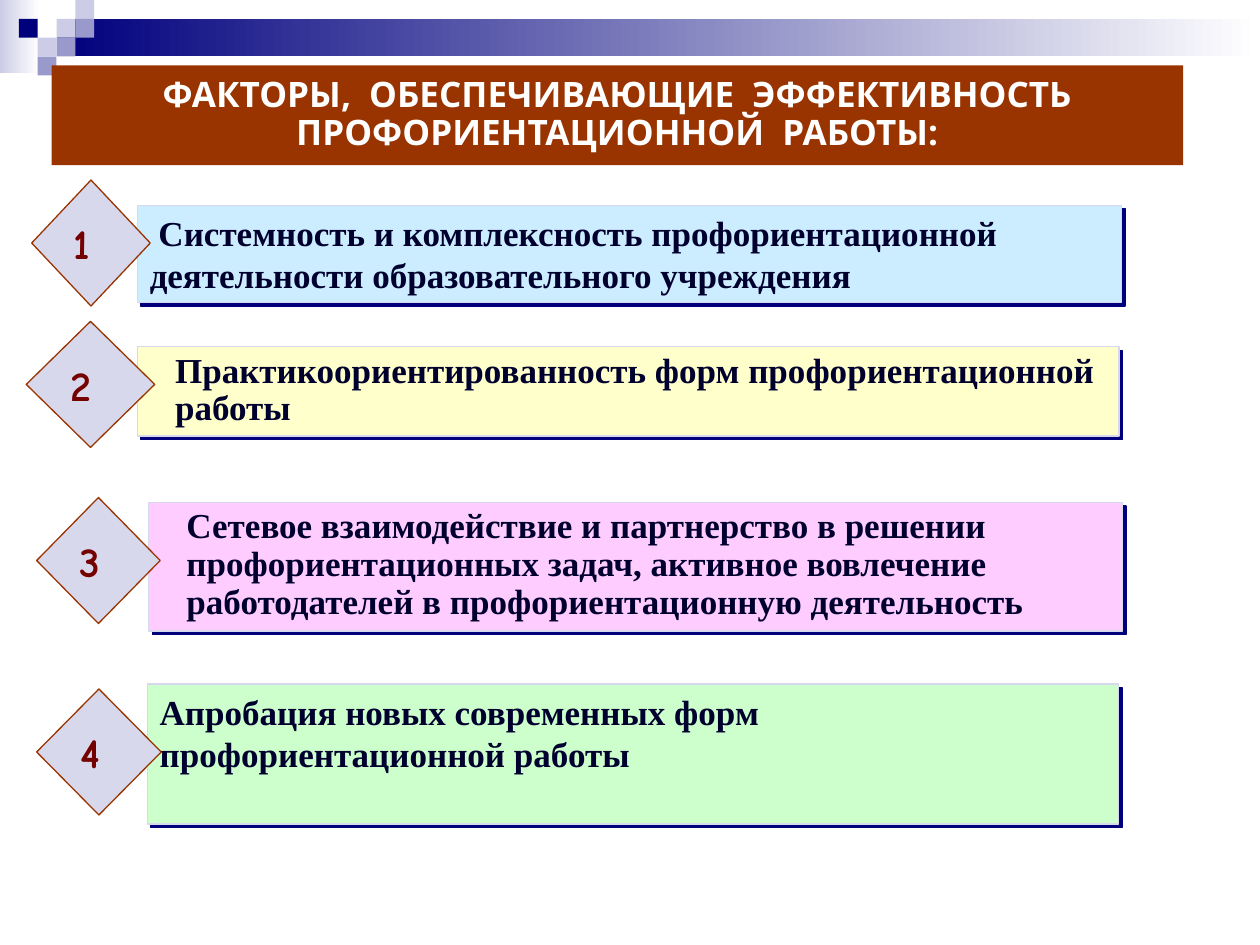
from lxml import etree
from pptx import Presentation, util as u
from pptx.dml import color
from pptx.enum import shapes, text
from pptx.oxml import ns

KIND = shapes.MSO_SHAPE
SERIF = {"size": u.Pt(20), "name": "Times New Roman", "bold": True}
SANS = {"size": u.Pt(20), "name": "Noto Sans", "bold": True}
COMIC = {"size": u.Pt(24), "name": "Comic Neue", "bold": True}
NAVY, LILAC, PALE, RUST = "00007D", "9999CC", "CCCCE6", "993300"
EDGE = "D8D8EC"
STEP = 0.38

# Column, row and colour of each small square
TILES = [(3, 1, PALE), (4, 0, PALE), (4, 1, LILAC), (2, 2, PALE),
         (1, 1, NAVY), (3, 2, LILAC), (2, 3, LILAC)]

# Box place, colour, left inset, line spacing, wording; diamond place
ITEMS = [
    ((2.77, 4.14, 19.84, 1.96), "CCECFF", 0.25, 1,
     " Системность и комплексность профориентационной деятельности "
     "образовательного учреждения", (0.64, 3.63, 2.39, 2.54)),
    ((2.77, 6.99, 19.79, 1.8), "FFFFCC", 0.76, 0.9,
     "Практикоориентированность форм профориентационной работы",
     (0.53, 6.48, 2.59, 2.54)),
    ((3, 10.13, 19.63, 2.59), "FFCCFF", 0.76, 0.9,
     "Сетевое взаимодействие и партнерство в решении "
     "профориентационных задач, активное вовлечение работодателей "
     "в профориентационную деятельность", (0.74, 10.03, 2.49, 2.54)),
    ((2.97, 13.79, 19.58, 2.82), "CCFFCC", 0.25, 1,
     "Апробация новых современных форм профориентационной работы",
     (0.74, 13.89, 2.51, 2.54)),
]


def rgb(code):
    return color.RGBColor.from_string(code)


def form(slide, kind, place, fill, line=None):
    """Add a flat shape with a plain fill and an optional thin edge."""
    shape = slide.shapes.add_shape(kind, *map(u.Cm, place))
    shape.shadow.inherit = False
    shape.fill.solid()
    shape.fill.fore_color.rgb = rgb(fill)
    if line:
        shape.line.color.rgb = rgb(line)
        shape.line.width = u.Pt(0.75)
    else:
        shape.line.fill.background()
    return shape


def fade(slide, place, start):
    """Add a bar that fades to white from left to right."""
    fill = form(slide, KIND.RECTANGLE, place, start).fill
    fill.gradient()
    fill.gradient_angle = 0
    for stop, code, spot in zip(fill.gradient_stops, (start, "FFFFFF"), (0, 1)):
        stop.color.rgb = rgb(code)
        stop.position = spot


def write(shape, words, font, ink, align="LEFT", anchor="TOP", inset=0.25,
          space=1):
    frame = shape.text_frame
    look = {"word_wrap": True, "margin_left": u.Cm(inset),
            "vertical_anchor": getattr(text.MSO_ANCHOR, anchor)}
    for key, value in look.items():
        setattr(frame, key, value)
    para = frame.paragraphs[0]
    para.alignment = getattr(text.PP_ALIGN, align)
    para.line_spacing = float(space)
    run = para.add_run()
    run.text = words
    for key, value in font.items():
        setattr(run.font, key, value)
    run.font.color.rgb = rgb(ink)


def shade(shape):
    """Give the shape a hard shadow to the lower right."""
    effect = shape._element.spPr.find(ns.qn("a:effectLst"))
    drop = etree.SubElement(effect, ns.qn("a:outerShdw"), dist=str(u.Pt(2.8)),
                            dir="2700000", algn="ctr", rotWithShape="0")
    etree.SubElement(drop, ns.qn("a:srgbClr"), val=NAVY)


def main():
    deck = Presentation()
    deck.slide_width, deck.slide_height = u.Cm(25.4), u.Cm(19.05)
    slide = deck.slides.add_slide(deck.slide_layouts[6])

    # Top bars and mosaic
    fade(slide, (0, 0, 0.79, 1.47), PALE)
    fade(slide, (1.14, STEP, 24.26, 2 * STEP), NAVY)
    for col, row, fill in TILES:
        place = ((col - 1) * STEP + 0.38, row * STEP, STEP, STEP)
        form(slide, KIND.RECTANGLE, place, fill)

    # Heading
    head = form(slide, KIND.RECTANGLE, (1.04, 1.32, 22.81, 2.01), RUST)
    write(head, "ФАКТОРЫ,  ОБЕСПЕЧИВАЮЩИЕ  ЭФФЕКТИВНОСТЬ "
          "ПРОФОРИЕНТАЦИОННОЙ  РАБОТЫ:", SANS, "FFFFFF", "CENTER", "MIDDLE",
          space=0.9)

    # Numbered factors
    for num, (place, fill, inset, space, words, spot) in enumerate(ITEMS, 1):
        box = form(slide, KIND.RECTANGLE, place, fill, EDGE)
        shade(box)
        write(box, words, SERIF, "00002E", inset=inset, space=space)
        mark = form(slide, KIND.DIAMOND, spot, EDGE, RUST)
        write(mark, str(num), COMIC, "740000")

    deck.save("out.pptx")


if __name__ == "__main__":
    main()
